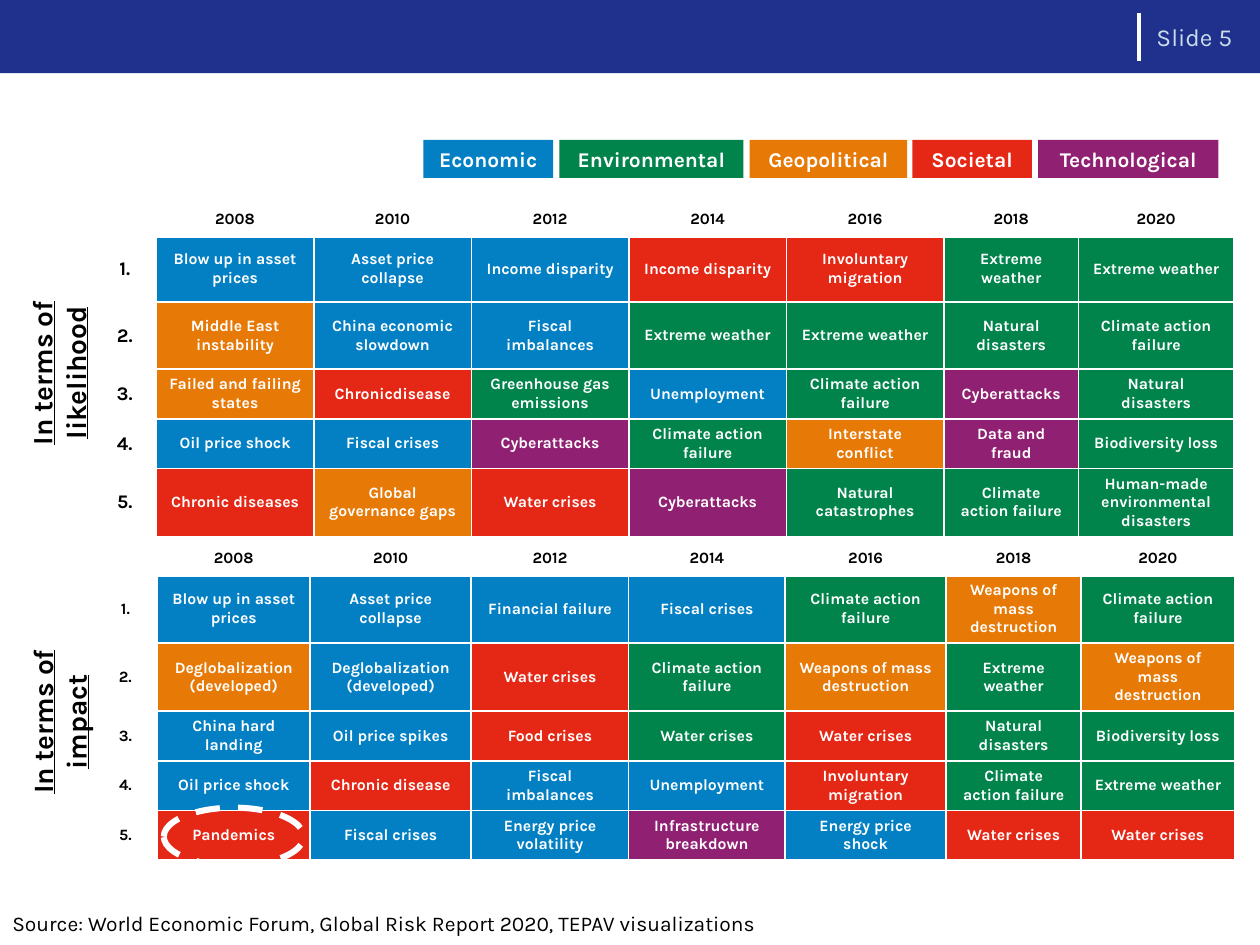
from pptx import Presentation
from pptx.dml.color import RGBColor
from pptx.enum.dml import MSO_LINE
from pptx.enum.shapes import MSO_CONNECTOR, MSO_SHAPE
from pptx.enum.text import MSO_ANCHOR, PP_ALIGN
from pptx.oxml import parse_xml
from pptx.oxml.ns import nsdecls
from pptx.oxml.xmlchemy import OxmlElement
from pptx.util import Inches, Pt

COLORS = {
    "banner": "1F318D", "white": "FFFFFF", "black": "000000", "pale": "CBDDEB",
    "Economic": "0380C4", "Environmental": "00844B", "Geopolitical": "E77906",
    "Societal": "E52716", "Technological": "902172",
}
CATEGORIES = {"E": "Economic", "N": "Environmental", "G": "Geopolitical",
              "S": "Societal", "T": "Technological"}
YEARS = ["2008", "2010", "2012", "2014", "2016", "2018", "2020"]

deck = Presentation()
deck.slide_width, deck.slide_height = Inches(10), Inches(7.5)
page = deck.slides.add_slide(deck.slide_layouts[6])


def area(left, top, width, height):
    """Turn percentages of the slide's width and height into lengths."""
    across, down = deck.slide_width / 100, deck.slide_height / 100
    return [round(share * unit) for share, unit in
            zip((left, top, width, height), (across, down, across, down))]


def write(frame, text, size, color, align=PP_ALIGN.CENTER, bold=True):
    frame.word_wrap = True
    para = frame.paragraphs[0]
    para.alignment = align
    span = para.add_run()
    span.text = text
    span.font.name = "Karla"
    span.font.size = Pt(size)
    span.font.bold = bold
    span.font.color.rgb = RGBColor.from_string(COLORS[color])
    return span


# Banner with its divider
banner = page.shapes.add_shape(MSO_SHAPE.RECTANGLE, *area(0, 0, 100, 7.75))
banner.shadow.inherit = False
banner.fill.solid()
banner.fill.fore_color.rgb = RGBColor.from_string(COLORS["banner"])
banner.line.fill.background()

x, top, _, height = area(90.4, 1.35, 0, 5.1)
divider = page.shapes.add_connector(MSO_CONNECTOR.STRAIGHT, x, top, x, top + height)
divider.line.color.rgb = RGBColor.from_string(COLORS["white"])
divider.line.width = Pt(2.5)
divider._element.spPr.append(OxmlElement("a:effectLst"))

# Risk tables: each row holds its category letters, then its risks
likelihood = [
    ("EEESSNN", ["Blow up in asset prices", "Asset price collapse", "Income disparity",
                 "Income disparity", "Involuntary migration", "Extreme weather",
                 "Extreme weather"]),
    ("GEENNNN", ["Middle East instability", "China economic slowdown", "Fiscal imbalances",
                 "Extreme weather", "Extreme weather", "Natural disasters",
                 "Climate action failure"]),
    ("GSNENTN", ["Failed and failing states", "Chronicdisease", "Greenhouse gas emissions",
                 "Unemployment", "Climate action failure", "Cyberattacks",
                 "Natural disasters"]),
    ("EETNGTN", ["Oil price shock", "Fiscal crises", "Cyberattacks",
                 "Climate action failure", "Interstate conflict", "Data and fraud",
                 "Biodiversity loss"]),
    ("SGSTNNN", ["Chronic diseases", "Global governance gaps", "Water crises",
                 "Cyberattacks", "Natural catastrophes", "Climate action failure",
                 "Human-made environmental disasters"]),
]
impact = [
    ("EEEENGN", ["Blow up in asset prices", "Asset price collapse", "Financial failure",
                 "Fiscal crises", "Climate action failure", "Weapons of mass destruction",
                 "Climate action failure"]),
    ("GESNGNG", ["Deglobalization (developed)", "Deglobalization (developed)",
                 "Water crises", "Climate action failure", "Weapons of mass destruction",
                 "Extreme weather", "Weapons of mass destruction"]),
    ("EESNSNN", ["China hard landing", "Oil price spikes", "Food crises", "Water crises",
                 "Water crises", "Natural disasters", "Biodiversity loss"]),
    ("ESEESNN", ["Oil price shock", "Chronic disease", "Fiscal imbalances", "Unemployment",
                 "Involuntary migration", "Climate action failure", "Extreme weather"]),
    ("SEETESS", ["Pandemics", "Fiscal crises", "Energy price volatility",
                 "Infrastructure breakdown", "Energy price shock", "Water crises",
                 "Water crises"]),
]
tables = [
    (likelihood, 21.47, 11, [5, 12.5, 12.5, 12.5, 12.5, 12.5, 10.7, 12.3],
     [3.5, 7, 7.1, 5.25, 5.25, 7.1]),
    (impact, 57.33, 9, [5.1, 12.1, 12.8, 12.5, 12.4, 12.8, 10.7, 12.2],
     [3.5, 7.1, 7.1, 5.25, 5.25, 5.25]),
]
for risks, top, rank_size, widths, heights in tables:
    frame = page.shapes.add_table(len(heights), len(widths),
                                  *area(7.4, top, sum(widths), sum(heights)))
    grid = frame.table
    for column, width in zip(grid.columns, widths):
        column.width = area(0, 0, width, 0)[2]
    for row, height in zip(grid.rows, heights):
        row.height = area(0, 0, 0, height)[3]

    lines = [("", [""] + YEARS)]
    lines += [(letters, [f"{rank}."] + names)
              for rank, (letters, names) in enumerate(risks, 1)]
    for r, (letters, texts) in enumerate(lines):
        for c, text in enumerate(texts):
            cell = grid.cell(r, c)
            cell.vertical_anchor = MSO_ANCHOR.MIDDLE
            properties = cell._tc.get_or_add_tcPr()
            for side in "LRTB":
                thick = (r == 0 and side == "B") or (r == 1 and side == "T")
                properties.append(parse_xml(
                    f'<a:ln{side} {nsdecls("a")} w="{Pt(3 if thick else 1)}"><a:solidFill>'
                    f'<a:srgbClr val="{COLORS["white"]}"/></a:solidFill></a:ln{side}>'))
            if r and c:
                cell.fill.solid()
                cell.fill.fore_color.rgb = RGBColor.from_string(
                    COLORS[CATEGORIES[letters[c - 1]]])
                write(cell.text_frame, text, 9, "white")
                continue
            cell.fill.background()
            if text:
                write(cell.text_frame, text, rank_size if r else 9, "black")
            else:
                ending = OxmlElement("a:endParaRPr")
                ending.set("sz", "900")
                cell.text_frame.paragraphs[0]._p.append(ending)

# Side labels
for text, place in [("In terms of likelihood", (-4.7, 35.2, 18.7, 8.53)),
                    ("In terms of impact", (-3.5, 72.13, 16.4, 8.53))]:
    label = page.shapes.add_textbox(*area(*place))
    label.rotation = 270
    write(label.text_frame, text, 16, "black").font.underline = True

source = page.shapes.add_textbox(*area(0, 95.73, 66, 4))
write(source.text_frame,
      "Source: World Economic Forum, Global Risk Report 2020, TEPAV visualizations",
      12, "black", PP_ALIGN.LEFT, bold=False)

# Category legend
for name, left, width in [("Economic", 33.6, 10.3), ("Environmental", 44.4, 14.6),
                          ("Geopolitical", 59.5, 12.5), ("Societal", 72.4, 9.5),
                          ("Technological", 82.4, 14.3)]:
    box = page.shapes.add_shape(MSO_SHAPE.RECTANGLE, *area(left, 14.8, width, 4.04))
    box.shadow.inherit = False
    box.fill.solid()
    box.fill.fore_color.rgb = RGBColor.from_string(COLORS[name])
    box.line.fill.background()
    write(box.text_frame, name, 12, "white")
    box.text_frame.word_wrap = False

# Ring around the pandemics cell
ring = page.shapes.add_shape(MSO_SHAPE.OVAL, *area(13, 85.47, 11.1, 6.13))
ring.shadow.inherit = False
ring.fill.background()
ring.line.color.rgb = RGBColor.from_string(COLORS["white"])
ring.line.width = Pt(3.5)
ring.line.dash_style = MSO_LINE.DASH

number = page.shapes.add_textbox(*area(90.8, 0, 9.2, 7.87))
number.text_frame.vertical_anchor = MSO_ANCHOR.MIDDLE
write(number.text_frame, "Slide 5", 14, "pale", PP_ALIGN.LEFT, bold=False)

deck.save("out.pptx")
